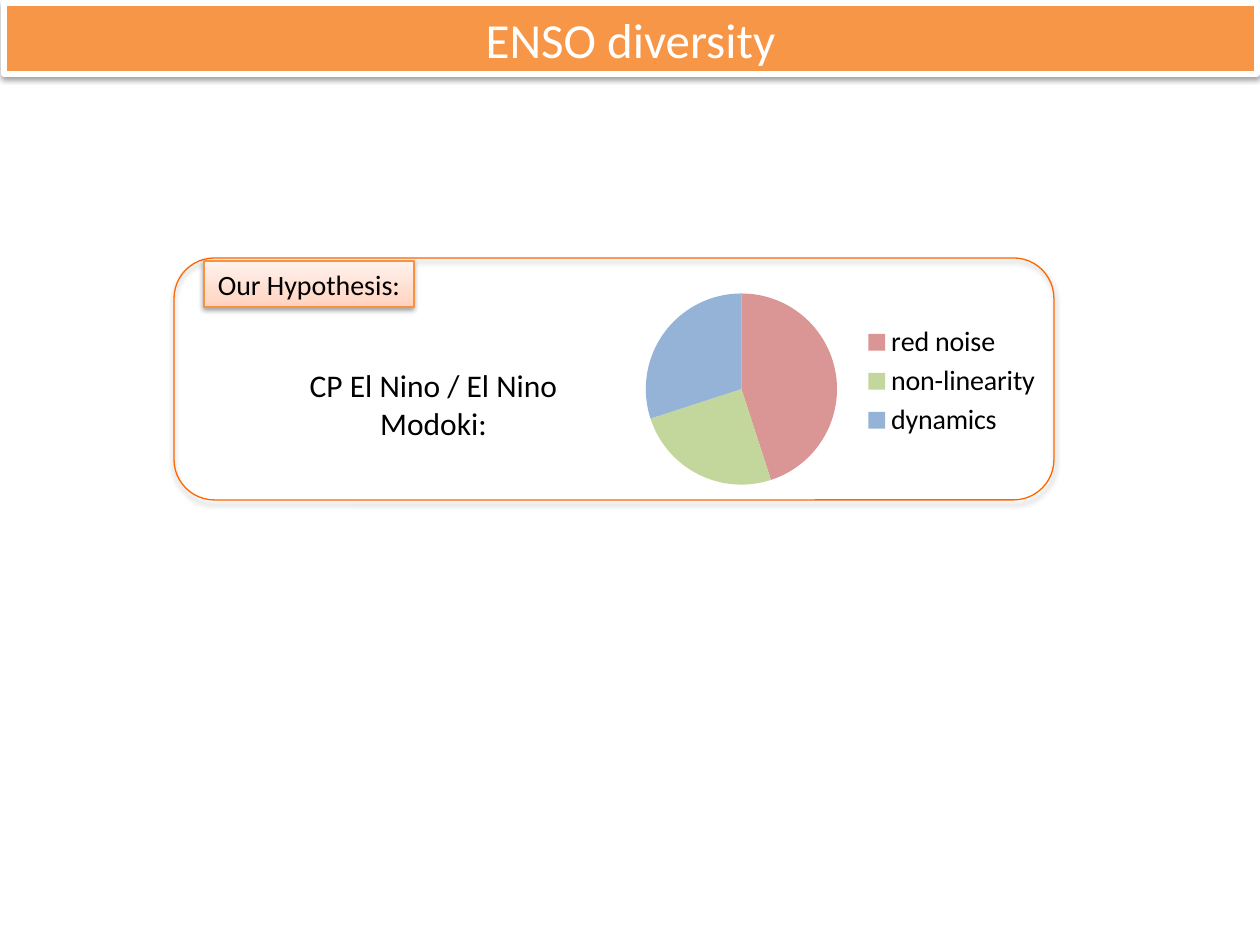
import pptx
import pptx.util
import pptx.chart.data
from lxml import etree
from pptx.dml.color import RGBColor
from pptx.enum.chart import XL_CHART_TYPE, XL_LEGEND_POSITION
from pptx.enum.shapes import MSO_SHAPE
from pptx.enum.text import MSO_ANCHOR, PP_ALIGN
from pptx.oxml import parse_xml
from pptx.oxml.ns import nsdecls, qn

PX = 914400 // 126
THEME = {
    "font": "Calibri", "title": 28, "body": 18, "label": 16,
    "black": "000000", "white": "FFFFFF", "orange": "F79646",
    "frame": "FF6600", "label_line": "F69240",
    "label_fill": [(0, "FFD2BD"), (35, "FFDED0"), (100, "FFF2ED")],
}

# name, value, colour
CAUSES = [
    ("red noise", 45, "D99694"),
    ("non-linearity", 25, "C3D69B"),
    ("dynamics", 30, "95B3D7"),
]
CHART_BOX = (598, 275, 478, 226)
PIE_BOX = (644, 292, 191, 191)
LEGEND_BOX = (862, 320, 180, 122)

CAPTION = {"box": (261, 360, 345, 88), "text": "CP El Nino / El Nino Modoki:",
           "size": "body", "color": "black", "anchor": MSO_ANCHOR.TOP}

# back to front; shadow is opacity in %, distance in pt
SHAPES = [
    {"box": (174, 258, 880, 242), "kind": MSO_SHAPE.ROUNDED_RECTANGLE,
     "line": ("frame", 0.75), "shadow": (35, 1.8)},
    {"box": (204, 261, 210, 46), "kind": MSO_SHAPE.RECTANGLE,
     "fill": "label_fill", "line": ("label_line", 0.75), "shadow": (38, 1.6),
     "text": "Our Hypothesis:", "size": "label", "color": "black"},
    {"box": (4, 3, 1253, 71), "kind": MSO_SHAPE.RECTANGLE,
     "fill": "orange", "line": ("white", 3), "shadow": (38, 1.6),
     "text": "ENSO diversity", "size": "title", "color": "white"},
]


def rgb(name):
    return RGBColor.from_string(THEME[name])


def emu(box):
    return [v * PX for v in box]


def set_font(font, size, color):
    values = {"name": THEME["font"], "size": pptx.util.Pt(THEME[size])}
    for key, value in values.items():
        setattr(font, key, value)
    font.color.rgb = rgb(color)


def write(sp, item):
    tf = sp.text_frame
    tf.word_wrap = True
    tf.vertical_anchor = item.get("anchor", MSO_ANCHOR.MIDDLE)
    p = tf.paragraphs[0]
    p.alignment = PP_ALIGN.CENTER
    r = p.add_run()
    r.text = item["text"]
    set_font(r.font, item["size"], item["color"])


def set_fill(sp, name):
    if name is None:
        sp.fill.background()
    elif isinstance(THEME[name], str):
        sp.fill.solid()
        sp.fill.fore_color.rgb = rgb(name)
    else:
        sp.fill.gradient()
        sp.fill.gradient_angle = 90
        stops = sp._element.spPr.find(".//" + qn("a:gsLst"))
        for gs in list(stops):
            stops.remove(gs)
        for pos, color in THEME[name]:
            gs = etree.SubElement(stops, qn("a:gs"), pos=str(pos * 1000))
            etree.SubElement(gs, qn("a:srgbClr"), val=color)


def add_shadow(sp, opacity, distance):
    """Give the shape a soft shadow straight below it."""
    sp.shadow.inherit = False
    effects = sp._element.spPr.find(qn("a:effectLst"))
    effects.append(parse_xml(
        f'<a:outerShdw {nsdecls("a")} blurRad="{pptx.util.Pt(3.1)}" '
        f'dist="{pptx.util.Pt(distance)}" dir="5400000" rotWithShape="0">'
        f'<a:srgbClr val="{THEME["black"]}"><a:alpha val="{opacity * 1000}"/>'
        '</a:srgbClr></a:outerShdw>'))


def place(parent, box, after, inner=False):
    """Fix a chart part at box, given in slide px, as fractions of the chart."""
    left, top, width, height = CHART_BOX
    x, y, w, h = box
    fractions = {"x": (x - left) / width, "y": (y - top) / height,
                 "w": w / width, "h": h / height}
    for old in parent.findall(qn("c:layout")):
        parent.remove(old)
    layout = etree.Element(qn("c:layout"))
    manual = etree.SubElement(layout, qn("c:manualLayout"))
    if inner:
        etree.SubElement(manual, qn("c:layoutTarget"), val="inner")
    for key in "xy":
        etree.SubElement(manual, qn(f"c:{key}Mode"), val="edge")
    for key, value in fractions.items():
        etree.SubElement(manual, qn(f"c:{key}"), val=f"{value:.2f}")
    if after is None:
        parent.insert(0, layout)
    else:
        parent.find(qn(after)).addnext(layout)


def add_pie(s):
    data = pptx.chart.data.CategoryChartData()
    data.categories = [name for name, _, _ in CAUSES]
    data.add_series("Series 1", [value for _, value, _ in CAUSES])
    chart = s.shapes.add_chart(XL_CHART_TYPE.PIE, *emu(CHART_BOX), data).chart
    chart.has_title = False
    set_font(chart.font, "body", "black")
    for i, (_, _, color) in enumerate(CAUSES):
        fill = chart.plots[0].series[0].points[i].format.fill
        fill.solid()
        fill.fore_color.rgb = RGBColor.from_string(color)
    chart.has_legend = True
    legend = chart.legend
    legend.position = XL_LEGEND_POSITION.RIGHT
    legend.include_in_layout = False
    set_font(legend.font, "label", "black")
    place(chart._chartSpace.find(".//" + qn("c:plotArea")), PIE_BOX, None, True)
    place(legend._element, LEGEND_BOX, "c:legendPos")


def main():
    prs = pptx.Presentation()
    prs.slide_width, prs.slide_height = emu((1260, 945))
    s = prs.slides.add_slide(prs.slide_layouts[6])
    add_pie(s)
    write(s.shapes.add_textbox(*emu(CAPTION["box"])), CAPTION)
    for item in SHAPES:
        sp = s.shapes.add_shape(item["kind"], *emu(item["box"]))
        set_fill(sp, item.get("fill"))
        color, width = item["line"]
        sp.line.color.rgb = rgb(color)
        sp.line.width = pptx.util.Pt(width)
        add_shadow(sp, *item["shadow"])
        if "text" in item:
            write(sp, item)
    prs.save("out.pptx")


if __name__ == "__main__":
    main()
